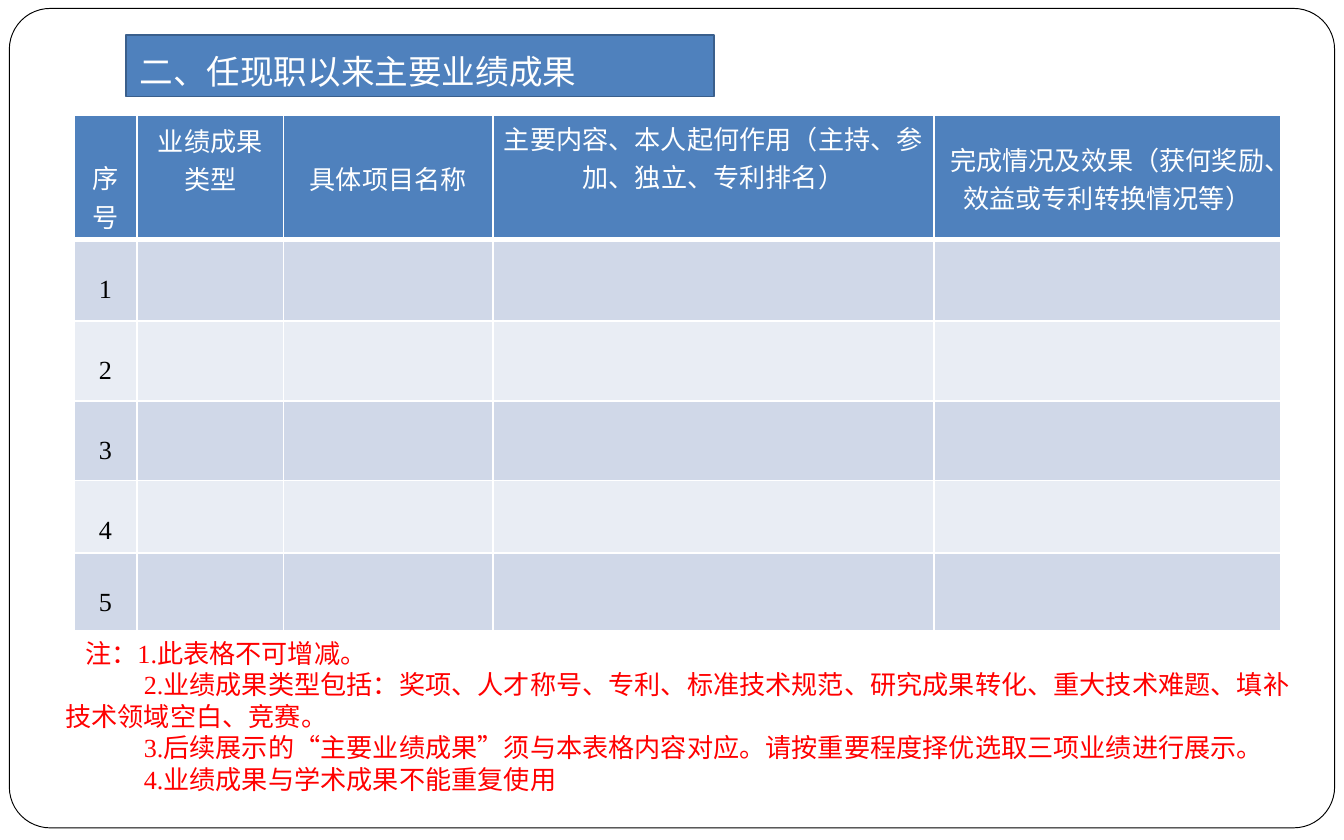
"""Build a slide with a table of main achievements and filling-in notes."""
import pptx
import pptx.dml.color
import pptx.enum.shapes
import pptx.enum.text
import pptx.oxml
import pptx.oxml.ns
import pptx.util

Pt = pptx.util.Pt
ALIGN = pptx.enum.text.PP_ALIGN
ANCHOR = pptx.enum.text.MSO_ANCHOR
NAMESPACE = pptx.oxml.ns.nsdecls("a")
SERIF, SANS = "Times New Roman", "Noto Sans CJK SC"
COLORS = {"white": "FFFFFF", "black": "000000", "blue": "4F81BD", "edge": "3A5F8C",
          "odd": "D0D8E8", "even": "E9EDF4", "red": "FF0000"}


def color(name):
    return pptx.dml.color.RGBColor.from_string(COLORS[name])


def style(paragraph, size, font, ink, align=ALIGN.LEFT):
    paragraph.alignment = align
    for span in paragraph.runs:
        span.font.size = Pt(size)
        span.font.name = font
        span.font.bold = False
        span.font.color.rgb = color(ink)
        span.font._element.append(pptx.oxml.parse_xml(f'<a:ea {NAMESPACE} typeface="{SANS}"/>'))


deck = pptx.Presentation()
deck.slide_width, deck.slide_height = Pt(720), Pt(450)
page = deck.slides.add_slide(deck.slide_layouts[5])

frame = page.shapes.add_shape(pptx.enum.shapes.MSO_SHAPE.ROUNDED_RECTANGLE,
                              Pt(5), Pt(4.5), Pt(710), Pt(439))
frame.adjustments[0] = 0.05
frame.shadow.inherit = False
frame.fill.solid()
frame.fill.fore_color.rgb = color("white")
frame.line.color.rgb = color("black")
frame.line.width = Pt(0.5)

title = page.shapes.title
page.shapes._spTree.append(title._element)
title.left, title.top, title.width, title.height = Pt(67.5), Pt(18.7), Pt(315), Pt(33)
title._element.spPr.append(pptx.oxml.parse_xml(
    f'<a:prstGeom {NAMESPACE} prst="homePlate"><a:avLst/></a:prstGeom>'))
title.fill.solid()
title.fill.fore_color.rgb = color("blue")
title.line.color.rgb = color("edge")
title.line.width = Pt(1)
title.text_frame.text = "二、任现职以来主要业绩成果"
title.text_frame.auto_size = pptx.enum.text.MSO_AUTO_SIZE.NONE
title.text_frame.vertical_anchor = ANCHOR.MIDDLE
title.text_frame.margin_top, title.text_frame.margin_bottom = Pt(6), 0
style(title.text_frame.paragraphs[0], 18, SERIF, "white")

headers = [
    ("序号", ANCHOR.TOP, 7.2, 23),
    ("业绩成果类型", ANCHOR.TOP, 7.2, 3),
    ("具体项目名称", ANCHOR.MIDDLE, 5, 0),
    ("主要内容、本人起何作用（主持、参加、独立、专利排名）", ANCHOR.TOP, 5, 2),
    ("完成情况及效果（获何奖励、效益或专利转换情况等）", ANCHOR.MIDDLE, 5, 0),
]
widths = [33.8, 78.5, 112.3, 236.2, 185.8]
heights = [66.5, 43.5, 43, 42.5, 39, 41.5]
table = page.shapes.add_table(len(heights), len(widths), Pt(39.6), Pt(61.9),
                              Pt(sum(widths)), Pt(sum(heights))).table
for column, width in zip(table.columns, widths):
    column.width = Pt(width)
for index, height in enumerate(heights):
    table.rows[index].height = Pt(height)
    for position, (label, anchor, side, top) in enumerate(headers):
        cell = table.cell(index, position)
        properties = cell._tc.get_or_add_tcPr()
        for edge in "LRTB":
            thick = (index, edge) in ((0, "B"), (1, "T"))
            properties.append(pptx.oxml.parse_xml(
                f'<a:ln{edge} {NAMESPACE} w="{Pt(3 if thick else 1)}"><a:solidFill>'
                f'<a:srgbClr val="{COLORS["white"]}"/></a:solidFill></a:ln{edge}>'))
        cell.fill.solid()
        cell.fill.fore_color.rgb = color("blue" if index == 0 else "odd" if index % 2 else "even")
        if index == 0:
            cell.text_frame.text = label
            cell.vertical_anchor = anchor
            cell.margin_left = cell.margin_right = Pt(side)
            cell.margin_top, cell.margin_bottom = Pt(top), Pt(min(top, 2.5))
            style(cell.text_frame.paragraphs[0], 14, SANS, "white", ALIGN.CENTER)
        elif position == 0:
            cell.text_frame.text = str(index)
            cell.margin_top, cell.margin_bottom = Pt(19), Pt(2.5)
            style(cell.text_frame.paragraphs[0], 14, SERIF, "black", ALIGN.CENTER)

notes = [
    (10.5, "注：1.此表格不可增减。"),
    (42, "2.业绩成果类型包括：奖项、人才称号、专利、标准技术规范、研究成果转化、重大技术难题、填补"),
    (0, "技术领域空白、竞赛。"),
    (42, "3.后续展示的“主要业绩成果”须与本表格内容对应。请按重要程度择优选取三项业绩进行展示。"),
    (42, "4.业绩成果与学术成果不能重复使用"),
]
box = page.shapes.add_textbox(Pt(28), Pt(337.7), Pt(692), Pt(96))
box.text_frame.word_wrap = True
box.text_frame.text = "\n".join(text for _, text in notes)
for paragraph, (indent, _) in zip(box.text_frame.paragraphs, notes):
    paragraph._p.get_or_add_pPr().set("indent", str(Pt(indent)))
    paragraph.line_spacing = Pt(16.9)
    style(paragraph, 14, SERIF, "red")

deck.save("out.pptx")
